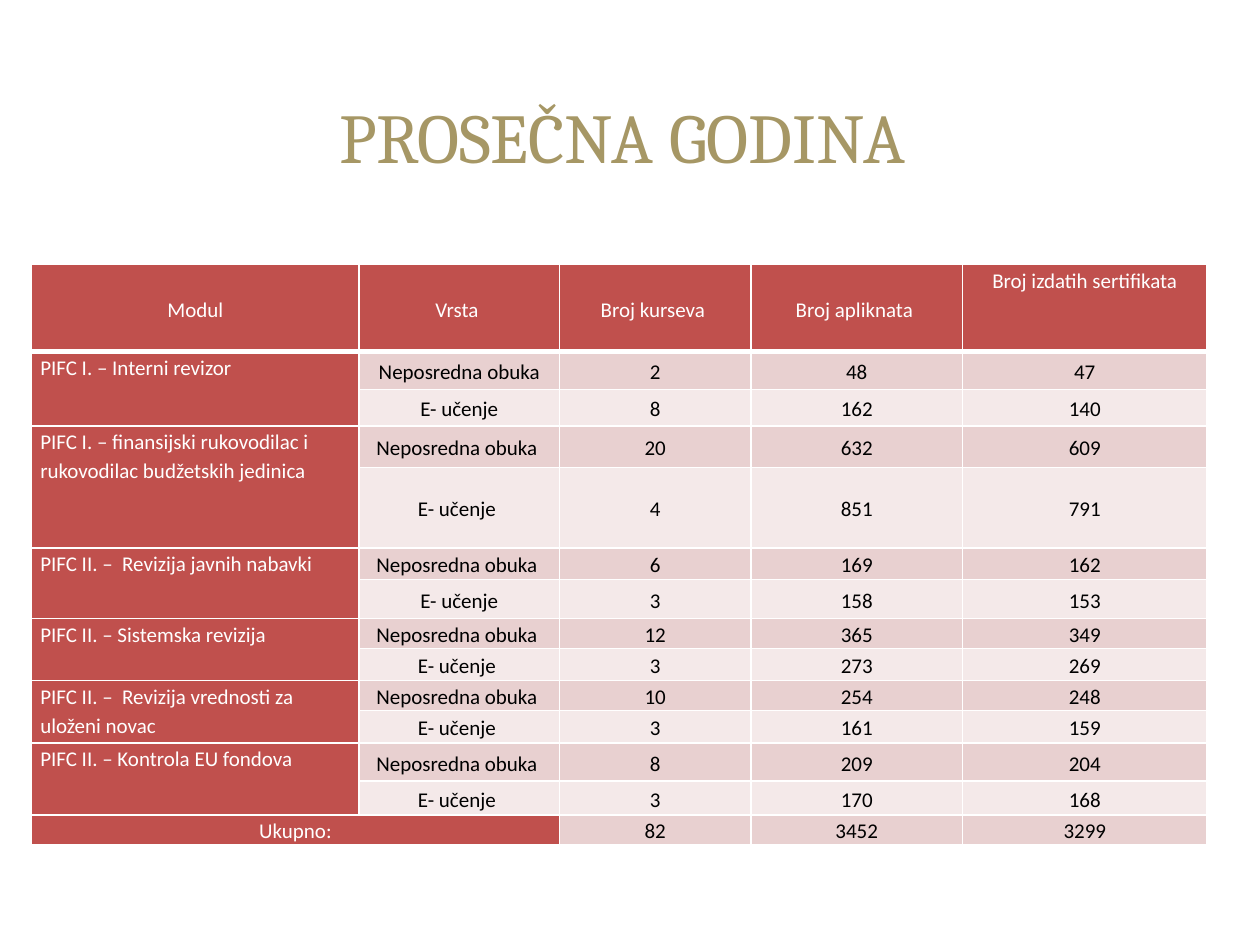
from lxml.etree import SubElement
from pptx import Presentation
from pptx.dml.color import RGBColor
from pptx.enum.text import MSO_ANCHOR as Anchor, PP_ALIGN as Align
from pptx.oxml.ns import qn
from pptx.util import Inches, Pt

RED, PINK, PALE, WHITE, BLACK, GOLD = "C0504D", "E8D0D0", "F4E9E9", "FFFFFF", "000000", "A69765"
COL_WIDTHS = [2.6, 1.59, 1.52, 1.68, 1.94]
ROW_HEIGHTS = [0.69, 0.3, 0.29, 0.33, 0.64, 0.25, 0.31, 0.24, 0.25, 0.24, 0.26, 0.3, 0.27, 0.23]
HEADER = ["Modul", "Vrsta ", "Broj kurseva ", "Broj apliknata ", "Broj izdatih sertifikata"]
MODULES = [
    ("PIFC I. – Interni revizor",
     ["Neposredna obuka", 2, 48, 47], ["E- učenje", 8, 162, 140]),
    ("PIFC I. – finansijski rukovodilac i rukovodilac budžetskih jedinica",
     ["Neposredna obuka ", 20, 632, 609], ["E- učenje ", 4, 851, 791]),
    ("PIFC II. –  Revizija javnih nabavki",
     ["Neposredna obuka ", 6, 169, 162], ["E- učenje", 3, 158, 153]),
    ("PIFC II. – Sistemska revizija",
     ["Neposredna obuka ", 12, 365, 349], ["E- učenje ", 3, 273, 269]),
    ("PIFC II. –  Revizija vrednosti za uloženi novac",
     ["Neposredna obuka ", 10, 254, 248], ["E- učenje ", 3, 161, 159]),
    ("PIFC II. – Kontrola EU fondova",
     ["Neposredna obuka ", 8, 209, 204], ["E- učenje ", 3, 170, 168]),
]
TOTALS = [82, 3452, 3299]


def rgb(color):
    """Turn a hex string into a colour."""
    return RGBColor.from_string(color)


def add_run(p, text, font, size, color):
    """Add one formatted run to a paragraph."""
    r = p.add_run()
    r.text = text
    r.font.name, r.font.size = font, Pt(size)
    r.font.color.rgb = rgb(color)


def add_title(s, text):
    """Place and fill the title placeholder."""
    sp = s.shapes.title
    sp.left, sp.top, sp.width, sp.height = Inches(0.5), Inches(0.45), Inches(9), Inches(1.25)
    tf = sp.text_frame
    tf.word_wrap, tf.vertical_anchor = True, Anchor.MIDDLE
    p = tf.paragraphs[0]
    p.alignment = Align.CENTER
    add_run(p, text, "Cambria", 40, GOLD)


def style_cell(cell, fill, bottom=1):
    """Give a cell white borders, narrow margins and a fill."""
    tc_pr = cell._tc.get_or_add_tcPr()
    for side, width in (("L", 1), ("R", 1), ("T", 1), ("B", bottom)):
        ln = SubElement(tc_pr, qn(f"a:ln{side}"), w=str(Pt(width)))
        SubElement(SubElement(ln, qn("a:solidFill")), qn("a:srgbClr"), val=WHITE)
    cell.fill.solid()
    cell.fill.fore_color.rgb = rgb(fill)
    cell.margin_left = cell.margin_right = Inches(0.07)
    cell.margin_top = cell.margin_bottom = 0


def write_cell(cell, value, color=BLACK, align=Align.CENTER, anchor=Anchor.MIDDLE):
    """Write one value into a cell."""
    cell.vertical_anchor = anchor
    p = cell.text_frame.paragraphs[0]
    p.alignment, p.line_spacing = align, 1.15
    add_run(p, str(value), "Calibri", 12, color)


def add_grid(s):
    """Add the empty table with its sizes and fills."""
    n_rows, n_cols = len(ROW_HEIGHTS), len(COL_WIDTHS)
    table = s.shapes.add_table(n_rows, n_cols, Inches(0.25), Inches(2.1),
                               Inches(sum(COL_WIDTHS)), Inches(sum(ROW_HEIGHTS))).table
    for column, width in zip(table.columns, COL_WIDTHS):
        column.width = Inches(width)
    for i, height in enumerate(ROW_HEIGHTS):
        table.rows[i].height = Inches(height)
        for j in range(n_cols):
            is_label = i == 0 or j == 0 or (i == n_rows - 1 and j == 1)
            band = PINK if i % 2 else PALE
            style_cell(table.cell(i, j), RED if is_label else band, 1 if i else 3)
    return table


def fill_header(table):
    """Write the column headings."""
    for j, text in enumerate(HEADER):
        anchor = Anchor.TOP if j == len(HEADER) - 1 else Anchor.MIDDLE
        write_cell(table.cell(0, j), text, WHITE, anchor=anchor)


def fill_module(table, top, name, *rows):
    """Write a module name beside its rows of figures."""
    label = table.cell(top, 0)
    label.merge(table.cell(top + len(rows) - 1, 0))
    write_cell(label, name, WHITE, Align.LEFT, Anchor.TOP)
    for i, row in enumerate(rows, top):
        for j, value in enumerate(row, 1):
            write_cell(table.cell(i, j), value)


def fill_totals(table):
    """Write the closing row of totals."""
    last = len(ROW_HEIGHTS) - 1
    label = table.cell(last, 0)
    label.merge(table.cell(last, 1))
    write_cell(label, "Ukupno:", WHITE, anchor=Anchor.TOP)
    for j, total in enumerate(TOTALS, 2):
        write_cell(table.cell(last, j), total, anchor=Anchor.TOP)


def main():
    """Build the slide and save it."""
    prs = Presentation()
    prs.slide_width, prs.slide_height = Inches(10), Inches(7.5)
    s = prs.slides.add_slide(prs.slide_layouts[5])
    add_title(s, "PROSEČNA GODINA ")
    table = add_grid(s)
    fill_header(table)
    for k, module in enumerate(MODULES):
        fill_module(table, 1 + 2 * k, *module)
    fill_totals(table)
    prs.save("out.pptx")


if __name__ == "__main__":
    main()
